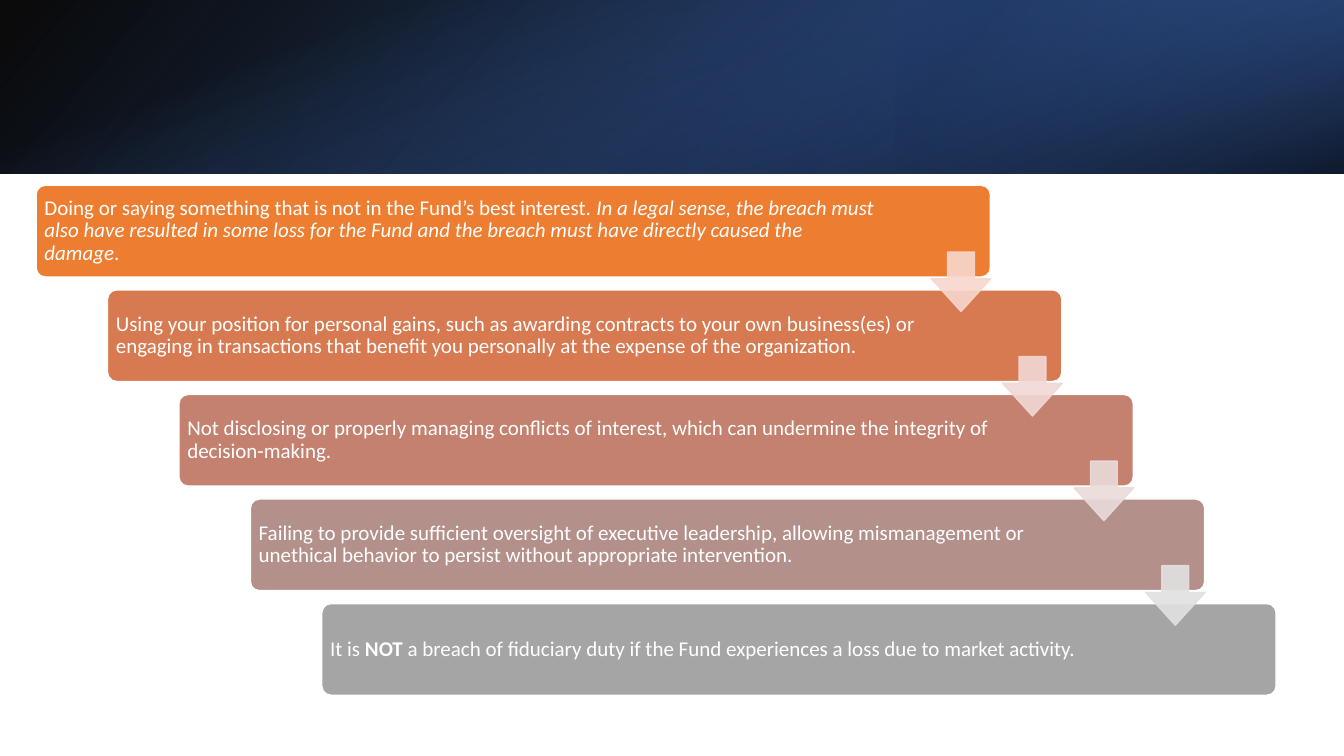
from dataclasses import dataclass

from lxml.etree import SubElement
from pptx import Presentation
from pptx.dml.color import RGBColor
from pptx.enum.shapes import MSO_SHAPE
from pptx.enum.text import MSO_ANCHOR, PP_ALIGN
from pptx.oxml.ns import qn
from pptx.shapes.autoshape import Shape
from pptx.util import Cm, Pt

COLORS = {
    "white": "FFFFFF", "black": "000000",
    "blue": "2F5597", "navy": "203864", "sky": "4472C4",
    "bar1": "ED7D31", "bar2": "D87A51", "bar3": "C48170",
    "bar4": "B4908B", "bar5": "A5A5A5",
    "arrow1": "F8D7CE", "arrow2": "F1D8D4",
    "arrow3": "E9DBDA", "arrow4": "E1E1E1",
}
WIDE, HIGH = 33.87, 19.05
HEAD = 4.38                        # header height
LEFT, TOP = 0.91, 4.67             # first bar
BAR_W, BAR_H = 24.05, 2.31
STEP_X, STEP_Y = 1.8, 2.635        # from bar to bar
PAD = 0.06                         # text box inside its bar
ARROW = 1.5
ARROW_X, ARROW_Y = 22.56, 1.68     # arrow from its bar's corner


@dataclass
class Stop:
    pos: int
    color: str
    alpha: int


@dataclass
class Band:
    box: tuple[float, float, float, float]
    angle: int
    stops: tuple[Stop, Stop]
    turn: int = 0
    flip: bool = False


@dataclass
class Run:
    text: str
    bold: bool = False
    italic: bool = False


@dataclass
class Step:
    runs: list[Run]
    width: float = 20.62


BANDS = [
    Band((0, 0, WIDE, HEAD), 140,
         (Stop(0, "black", 96), Stop(100, "blue", 100)), flip=True),
    Band((WIDE * 2 / 3, 0, WIDE / 3, HEAD), 320,
         (Stop(19, "navy", 68), Stop(100, "sky", 79)), turn=180, flip=True),
    Band(((WIDE - HEAD) / 2, (HEAD - WIDE) / 2, HEAD, WIDE), 340,
         (Stop(23, "sky", 0), Stop(99, "black", 74)), turn=90),
]

STEPS = [
    Step([Run("Doing or saying something that is not in the Fund’s best interest. "),
          Run("In a legal sense, the breach must also have resulted in some loss "
              "for the Fund and the breach must have directly caused the damage",
              italic=True),
          Run(".")], 21.29),
    Step([Run("Using your position for personal gains, such as awarding contracts "
              "to your own business(es) or engaging in transactions that benefit "
              "you personally at the expense of the organization.")]),
    Step([Run("Not disclosing or properly managing conflicts of interest, which "
              "can undermine the integrity of decision-making.")]),
    Step([Run("Failing to provide sufficient oversight of executive leadership, "
              "allowing mismanagement or unethical behavior to persist without "
              "appropriate intervention.")]),
    Step([Run("It is "), Run("NOT", bold=True),
          Run(" a breach of fiduciary duty if the Fund experiences a loss due to "
              "market activity.")]),
]


def shade(name: str) -> RGBColor:
    return RGBColor.from_string(COLORS[name])


def add_band(shapes, band: Band) -> None:
    shape = shapes.add_shape(MSO_SHAPE.RECTANGLE, *map(Cm, band.box))
    shape.shadow.inherit = False
    shape.line.fill.background()
    shape.rotation = band.turn
    props = shape._element.spPr
    if band.flip:
        props.find(qn("a:xfrm")).set("flipH", "1")
    # Gradient with transparent stops
    grad = SubElement(props, qn("a:gradFill"), rotWithShape="1")
    stops = SubElement(grad, qn("a:gsLst"))
    for stop in band.stops:
        mark = SubElement(stops, qn("a:gs"), pos=str(stop.pos * 1000))
        color = SubElement(mark, qn("a:srgbClr"), val=COLORS[stop.color])
        SubElement(color, qn("a:alpha"), val=str(stop.alpha * 1000))
    SubElement(grad, qn("a:lin"), ang=str(band.angle * 60000), scaled="0")
    props.find(qn("a:prstGeom")).addnext(grad)


def add_solid(shapes, kind: MSO_SHAPE, box: tuple, fill: str, line: str,
              adjust: tuple) -> Shape:
    shape = shapes.add_shape(kind, *map(Cm, box))
    shape.shadow.inherit = False
    for place, value in enumerate(adjust):
        shape.adjustments[place] = value
    shape.fill.solid()
    shape.fill.fore_color.rgb = shade(fill)
    shape.line.color.rgb = shade(line)
    shape.line.width = Pt(1)
    return shape


def add_step(shapes, place: int, step: Step) -> None:
    left, top = LEFT + place * STEP_X, TOP + place * STEP_Y
    add_solid(shapes, MSO_SHAPE.ROUNDED_RECTANGLE, (left, top, BAR_W, BAR_H),
              f"bar{place + 1}", "white", (0.1,))
    box = shapes.add_textbox(Cm(left + PAD), Cm(top + PAD),
                             Cm(step.width), Cm(BAR_H - 2 * PAD))
    frame = box.text_frame
    frame.word_wrap = True
    frame.vertical_anchor = MSO_ANCHOR.MIDDLE
    frame.margin_left = frame.margin_right = Cm(0.15)
    frame.margin_top = frame.margin_bottom = Cm(0.15)
    para = frame.paragraphs[0]
    para.alignment = PP_ALIGN.LEFT
    para.line_spacing = 0.9
    for part in step.runs:
        run = para.add_run()
        run.text = part.text
        font = run.font
        font.name, font.size = "Calibri", Pt(15)
        font.bold, font.italic = part.bold, part.italic
        font.color.rgb = shade("white")


def add_arrow(shapes, place: int) -> None:
    box = (LEFT + place * STEP_X + ARROW_X, TOP + place * STEP_Y + ARROW_Y,
           ARROW, ARROW)
    name = f"arrow{place + 1}"
    shape = add_solid(shapes, MSO_SHAPE.DOWN_ARROW, box, name, name, (0.45, 0.55))
    for color in shape._element.spPr.iter(qn("a:srgbClr")):
        SubElement(color, qn("a:alpha"), val="90000")


def main() -> None:
    deck = Presentation()
    deck.slide_width, deck.slide_height = Cm(WIDE), Cm(HIGH)
    slide = deck.slides.add_slide(deck.slide_layouts[6])

    # Header
    for band in BANDS:
        add_band(slide.shapes, band)

    # Staircase of bars, then the arrows over them
    stairs = slide.shapes.add_group_shape().shapes
    for place, step in enumerate(STEPS):
        add_step(stairs, place, step)
    for place in range(len(STEPS) - 1):
        add_arrow(stairs, place)

    deck.save("out.pptx")


if __name__ == "__main__":
    main()
